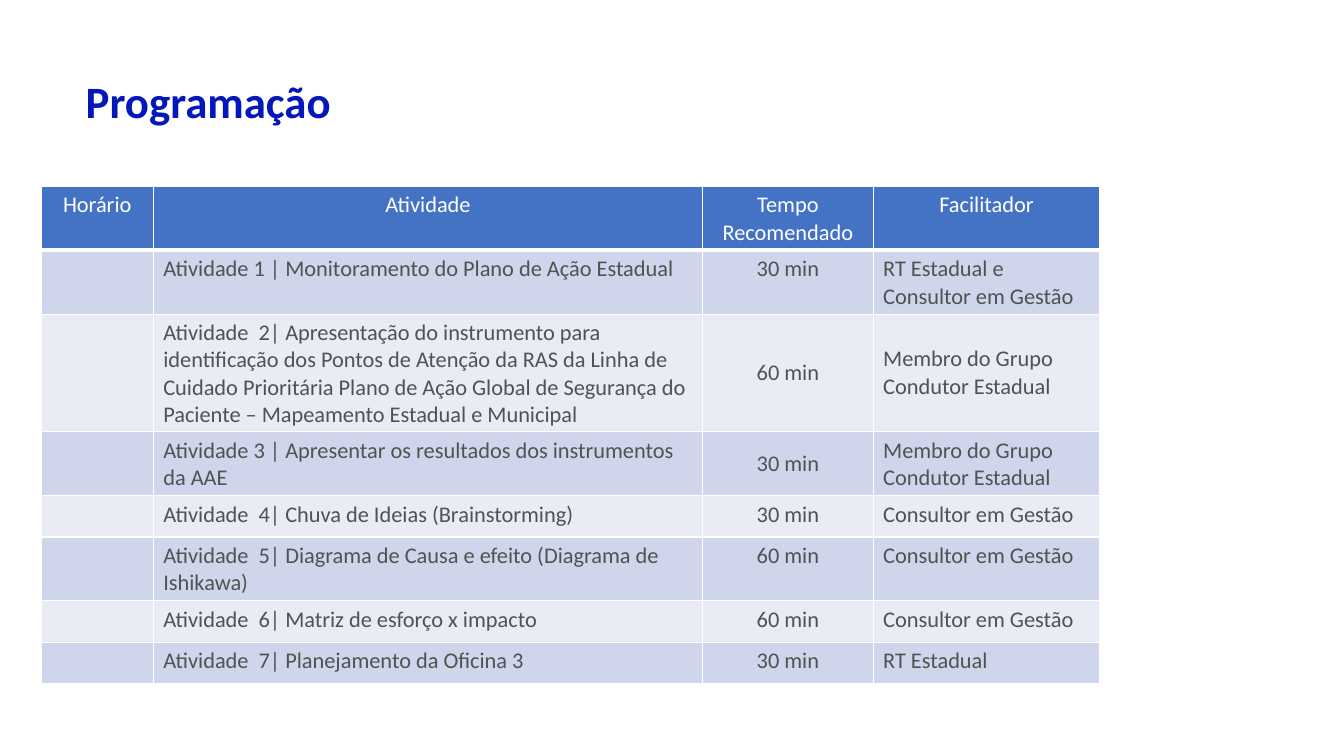
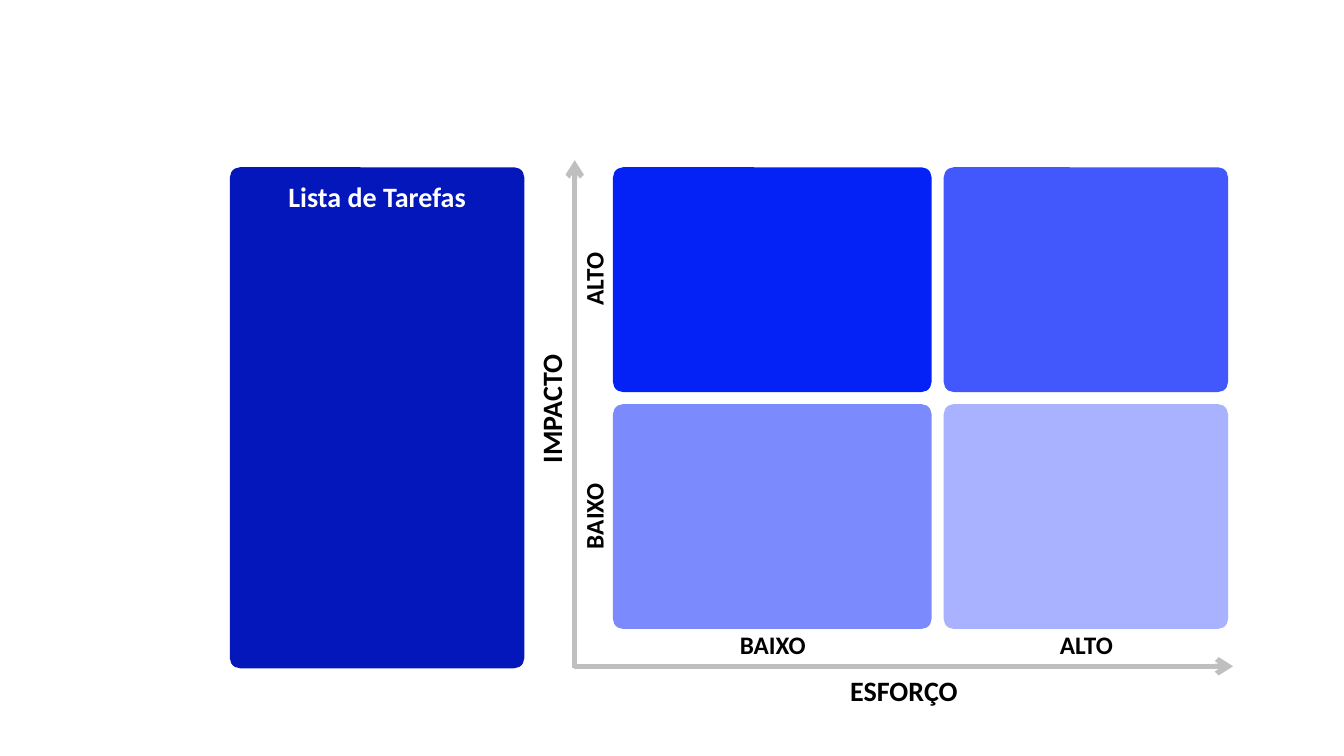
from dataclasses import dataclass
from typing import NamedTuple

from lxml.etree import SubElement
from pptx import Presentation
from pptx.dml.color import RGBColor
from pptx.enum.shapes import MSO_CONNECTOR, MSO_SHAPE
from pptx.enum.text import MSO_ANCHOR, MSO_AUTO_SIZE, PP_ALIGN
from pptx.oxml.ns import qn
from pptx.slide import Slide
from pptx.table import _Cell as Cell
from pptx.text.text import _Paragraph as Para
from pptx.util import Emu, Pt

SCALE = 9144  # EMU per px, 100 px to the inch
FONT = "Calibri"
NAVY, WHITE, BLACK = "0317BB", "FFFFFF", "000000"
HEAD, BANDS, INK = "4472C4", ("CFD5EA", "E9EBF5"), "525252"
AXIS = "BFBFBF"


class Box(NamedTuple):
    x: int
    y: int
    w: int
    h: int


class Span(NamedTuple):
    start: int
    size: int

    @property
    def mid(self) -> int:
        return self.start + self.size // 2


@dataclass(frozen=True)
class Style:
    size: int
    color: str
    bold: bool = True
    lead: float | None = None
    align: PP_ALIGN = PP_ALIGN.CENTER


@dataclass(frozen=True)
class Task:
    text: str
    time: str
    guide: str
    middle: bool = False


TITLE = Style(32, NAVY, lead=68, align=PP_ALIGN.LEFT)
PANEL = Style(20, WHITE, lead=22.4)
NAME = Style(20, BLACK, lead=22.4)
LEVEL = Style(18, BLACK, lead=19.6)

HEADS = ("Horário", "Atividade", "Tempo Recomendado", "Facilitador")
WIDTHS = (111, 545, 169, 225)
TASKS = (
    Task("Atividade 1 | Monitoramento do Plano de Ação Estadual",
         "30 min", "RT Estadual e Consultor em Gestão"),
    Task("Atividade  2| Apresentação do instrumento para identificação dos "
         "Pontos de Atenção da RAS da Linha de Cuidado Prioritária Plano de "
         "Ação Global de Segurança do Paciente – Mapeamento Estadual e Municipal",
         "60 min", "Membro do Grupo Condutor Estadual", True),
    Task("Atividade 3 | Apresentar os resultados dos instrumentos da AAE",
         "30 min", "Membro do Grupo Condutor Estadual", True),
    Task("Atividade  4| Chuva de Ideias (Brainstorming)",
         "30 min", "Consultor em Gestão"),
    Task("Atividade  5| Diagrama de Causa e efeito (Diagrama de Ishikawa)",
         "60 min", "Consultor em Gestão"),
    Task("Atividade  6| Matriz de esforço x impacto",
         "60 min", "Consultor em Gestão"),
    Task("Atividade  7| Planejamento da Oficina 3",
         "30 min", "RT Estadual"),
)

COLS = (Span(608, 316), Span(936, 282))
ROWS = (Span(166, 223), Span(401, 223))
TILES = (("0421F6", "4258FC"), ("7B8AFD", "A8B2FE"))


def px(value: int) -> Emu:
    return Emu(value * SCALE)


def rgb(color: str) -> RGBColor:
    return RGBColor.from_string(color)


def write(para: Para, text: str, style: Style) -> None:
    para.alignment = style.align
    if style.lead:
        para.line_spacing = Pt(style.lead)
    run = para.add_run()
    run.text = text
    font = run.font
    font.name, font.size, font.bold = FONT, Pt(style.size), style.bold
    font.color.rgb = rgb(style.color)


def label(slide: Slide, text: str, box: Box, style: Style, turn: int = 0) -> None:
    shape = slide.shapes.add_textbox(*map(px, box))
    shape.rotation = turn
    frame = shape.text_frame
    frame.word_wrap = True
    frame.auto_size = MSO_AUTO_SIZE.SHAPE_TO_FIT_TEXT
    frame.margin_left = frame.margin_right = 0
    frame.margin_top = frame.margin_bottom = 0
    write(frame.paragraphs[0], text, style)


def center(x: int, y: int, w: int, h: int) -> Box:
    """Place a box around its middle point."""
    return Box(x - w // 2, y - h // 2, w, h)


def tile(slide: Slide, box: Box, color: str) -> None:
    shape = slide.shapes.add_shape(MSO_SHAPE.ROUNDED_RECTANGLE, *map(px, box))
    shape.adjustments[0] = 10 / min(box.w, box.h)
    shape.shadow.inherit = False
    shape.fill.solid()
    shape.fill.fore_color.rgb = rgb(color)
    shape.line.fill.background()


def arrow(slide: Slide, x1: int, y1: int, x2: int, y2: int) -> None:
    line = slide.shapes.add_connector(
        MSO_CONNECTOR.STRAIGHT, px(x1), px(y1), px(x2), px(y2))
    line.line.color.rgb = rgb(AXIS)
    line.line.width = Pt(3.75)
    props = line._element.spPr
    SubElement(props.find(qn("a:ln")), qn("a:tailEnd"), type="arrow")
    SubElement(props, qn("a:effectLst"))


def border(cell: Cell, base: int) -> None:
    """Draw white sides of 1 pt, with the bottom side base pt wide."""
    props = cell._tc.get_or_add_tcPr()
    for side, width in (("L", 1), ("R", 1), ("T", 1), ("B", base)):
        line = SubElement(props, qn(f"a:ln{side}"), w=str(Pt(width)))
        fill = SubElement(line, qn("a:solidFill"))
        SubElement(fill, qn("a:srgbClr"), val=WHITE)


def fill_cell(cell: Cell, text: str, style: Style, color: str, base: int = 1) -> None:
    border(cell, base)
    cell.fill.solid()
    cell.fill.fore_color.rgb = rgb(color)
    if text:
        write(cell.text_frame.paragraphs[0], text, style)


def agenda(slide: Slide) -> None:
    label(slide, "Programação", Box(85, 32, 832, 83), TITLE)
    count = len(TASKS) + 1
    box = Box(41, 185, sum(WIDTHS), 41 * count)
    table = slide.shapes.add_table(count, len(HEADS), *map(px, box)).table
    table.first_row = table.horz_banding = False
    for col, width in zip(table.columns, WIDTHS):
        col.width = px(width)
    for col, text in enumerate(HEADS):
        fill_cell(table.cell(0, col), text, Style(16, WHITE, False), HEAD, 3)
    for row, task in enumerate(TASKS, 1):
        for col, text in enumerate(("", task.text, task.time, task.guide)):
            align = PP_ALIGN.CENTER if col == 2 else PP_ALIGN.LEFT
            cell = table.cell(row, col)
            fill_cell(cell, text, Style(16, INK, False, align=align),
                      BANDS[(row - 1) % 2])
            if task.middle and col >= 2:
                cell.vertical_anchor = MSO_ANCHOR.MIDDLE


def matrix(slide: Slide) -> None:
    panel = Box(228, 166, 292, 497)
    tile(slide, panel, NAVY)
    for row, shades in zip(ROWS, TILES):
        for col, shade in zip(COLS, shades):
            tile(slide, Box(col.start, row.start, col.size, row.size), shade)
    arrow(slide, 570, 663, 570, 159)
    arrow(slide, 569, 661, 1223, 661)
    label(slide, "Lista de Tarefas",
          center(panel.x + panel.w // 2, 195, 208, 31), PANEL)
    label(slide, "IMPACTO", center(547, 405, 179, 31), NAME, 270)
    label(slide, "ESFORÇO", center(896, 685, 179, 31), NAME)
    for row, text in zip(ROWS, ("ALTO", "BAIXO")):
        label(slide, text, center(590, row.mid, 123, 28), LEVEL, 270)
    for col, text in zip(COLS, ("BAIXO", "ALTO")):
        label(slide, text, center(col.mid, 641, 123, 28), LEVEL)


def main() -> None:
    deck = Presentation()
    deck.slide_width, deck.slide_height = px(1333), px(750)
    for draw in (agenda, matrix):
        draw(deck.slides.add_slide(deck.slide_layouts[6]))
    deck.save("out.pptx")


if __name__ == "__main__":
    main()
